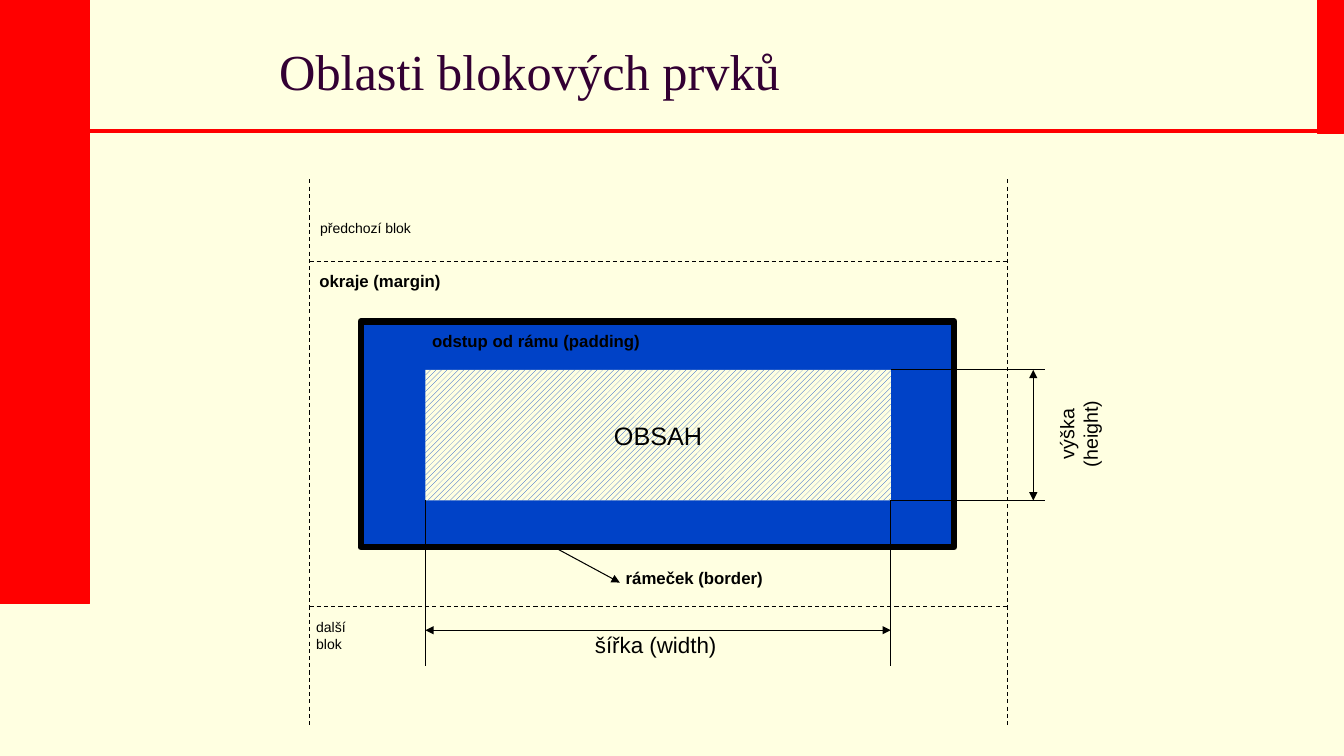
from lxml import etree
from pptx import Presentation
from pptx.dml.color import RGBColor
from pptx.enum import dml, shapes, text
from pptx.oxml.ns import qn
from pptx.util import Cm, Pt

CREAM = RGBColor(0xFF, 0xFF, 0xE1)
RED = RGBColor(0xFF, 0x00, 0x00)
BLUE = RGBColor(0x00, 0x42, 0xC7)
PLUM = RGBColor(0x33, 0x00, 0x33)
BLACK = RGBColor(0x00, 0x00, 0x00)
LEFT, CENTER = text.PP_ALIGN.LEFT, text.PP_ALIGN.CENTER

# Content: lines, (left, top, width, height) in cm, size, bold, alignment, rotation
TITLE = "Oblasti blokových prvků"
CONTENT_LABEL = "OBSAH"
LABELS = [
    (["výška", "(height)"], (26.09, 10.21, 2.18, 1.45), 14, False, CENTER, 270),
    (["šířka (width)"], (14.71, 15.77, 3.63, 0.94), 16, False, CENTER, 0),
    (["předchozí blok"], (7.82, 5.41, 2.82, 0.69), 10, False, LEFT, 0),
    (["další", "blok"], (7.72, 15.47, 1.27, 1.12), 10, False, LEFT, 0),
    (["odstup od rámu (padding)"], (10.64, 8.2, 5.82, 0.76), 12, True, LEFT, 0),
    (["rámeček (border)"], (15.52, 14.17, 3.99, 0.76), 12, True, LEFT, 0),
    (["okraje (margin)"], (7.8, 6.71, 3.61, 0.76), 12, True, LEFT, 0),
]

# Box model, in cm
GUIDE_LEFT, GUIDE_RIGHT, GUIDE_TOP, GUIDE_BOTTOM = 7.8, 25.38, 4.52, 18.29
MARGIN_TOP, MARGIN_BOTTOM = 6.6, 15.29
BORDER = (9.09, 8.1, 14.96, 5.69)
CONTENT = (10.72, 9.32, 11.73, 3.29)
HEIGHT_ARROW_X, WIDTH_ARROW_Y = 26.04, 15.88
EXTENSION_RIGHT, EXTENSION_BOTTOM = 26.34, 16.79

prs = Presentation()
prs.slide_width, prs.slide_height = Cm(33.87), Cm(19.05)
slide = prs.slides.add_slide(prs.slide_layouts[5])
slide.background.fill.solid()
slide.background.fill.fore_color.rgb = CREAM


def add_rect(box, fill, line, width):
    rect = slide.shapes.add_shape(shapes.MSO_SHAPE.RECTANGLE, *map(Cm, box))
    rect.shadow.inherit = False
    rect.fill.solid()
    rect.fill.fore_color.rgb = fill
    rect.line.color.rgb = line
    rect.line.width = Pt(width)
    return rect


def add_line(start, end, color=BLACK, width=0.75, dashed=False, arrows=()):
    line = slide.shapes.add_connector(
        shapes.MSO_CONNECTOR.STRAIGHT, *map(Cm, (*start, *end)))
    line.line.color.rgb = color
    line.line.width = Pt(width)
    if dashed:
        line.line.dash_style = dml.MSO_LINE.DASH
    outline = line.line._get_or_add_ln()
    for arrow in arrows:
        etree.SubElement(outline, qn("a:" + arrow), type="triangle")
    etree.SubElement(line._element.spPr, qn("a:effectLst"))


def write(frame, lines, size, color, font="Arial", bold=False, align=LEFT):
    frame.text = "\n".join(lines)
    for paragraph in frame.paragraphs:
        paragraph.alignment = align
        paragraph.font.name = font
        paragraph.font.size = Pt(size)
        paragraph.font.bold = bold
        paragraph.font.color.rgb = color


# Red frame of the page
add_rect((0, 0, 2.26, 15.21), RED, RED, 0.75)
add_line((1.42, 3.3), (33.2, 3.3), RED, 3.25)
add_rect((33.2, 0, 0.67, 3.36), RED, RED, 0.75)

# Title
title = slide.shapes.title
title.left, title.top, title.width, title.height = map(Cm, (6.78, 0.76, 21.59, 2.01))
write(title.text_frame, [TITLE], 36, PLUM, "Times New Roman")
title.text_frame.vertical_anchor = text.MSO_ANCHOR.MIDDLE

# Dashed limits of the block
for x in (GUIDE_LEFT, GUIDE_RIGHT):
    add_line((x, GUIDE_TOP), (x, GUIDE_BOTTOM), dashed=True)
for y in (MARGIN_TOP, MARGIN_BOTTOM):
    add_line((GUIDE_LEFT, y), (GUIDE_RIGHT, y), dashed=True)

# Border with padding, and the hatched content
add_rect(BORDER, BLUE, BLACK, 4.5)
content = add_rect(CONTENT, CREAM, BLACK, 0.75)
content.line.fill.background()
content.fill.patterned()
content.fill.pattern = dml.MSO_PATTERN.WIDE_UPWARD_DIAGONAL
content.fill.fore_color.rgb = BLUE
content.fill.back_color.rgb = CREAM
write(content.text_frame, [CONTENT_LABEL], 18, BLACK, align=CENTER)
content.text_frame.vertical_anchor = text.MSO_ANCHOR.MIDDLE
content.text_frame.word_wrap = False

# Dimension lines for height and width
left, top, width, height = CONTENT
right, bottom = left + width, top + height
BOTH_ENDS = ("headEnd", "tailEnd")
for y in (top, bottom):
    add_line((right, y), (EXTENSION_RIGHT, y))
for x in (left, right):
    add_line((x, bottom), (x, EXTENSION_BOTTOM))
add_line((HEIGHT_ARROW_X, top), (HEIGHT_ARROW_X, bottom), arrows=BOTH_ENDS)
add_line((left, WIDTH_ARROW_Y), (right, WIDTH_ARROW_Y), arrows=BOTH_ENDS)

# Pointer from the border to its label
add_line((13.97, 13.79), (15.62, 14.68), arrows=("tailEnd",))

# Labels
for lines, box, size, bold, align, rotation in LABELS:
    label = slide.shapes.add_textbox(*map(Cm, box))
    label.rotation = rotation
    label.text_frame.word_wrap = False
    label.text_frame.auto_size = text.MSO_AUTO_SIZE.SHAPE_TO_FIT_TEXT
    write(label.text_frame, lines, size, BLACK, bold=bold, align=align)

prs.save("out.pptx")
